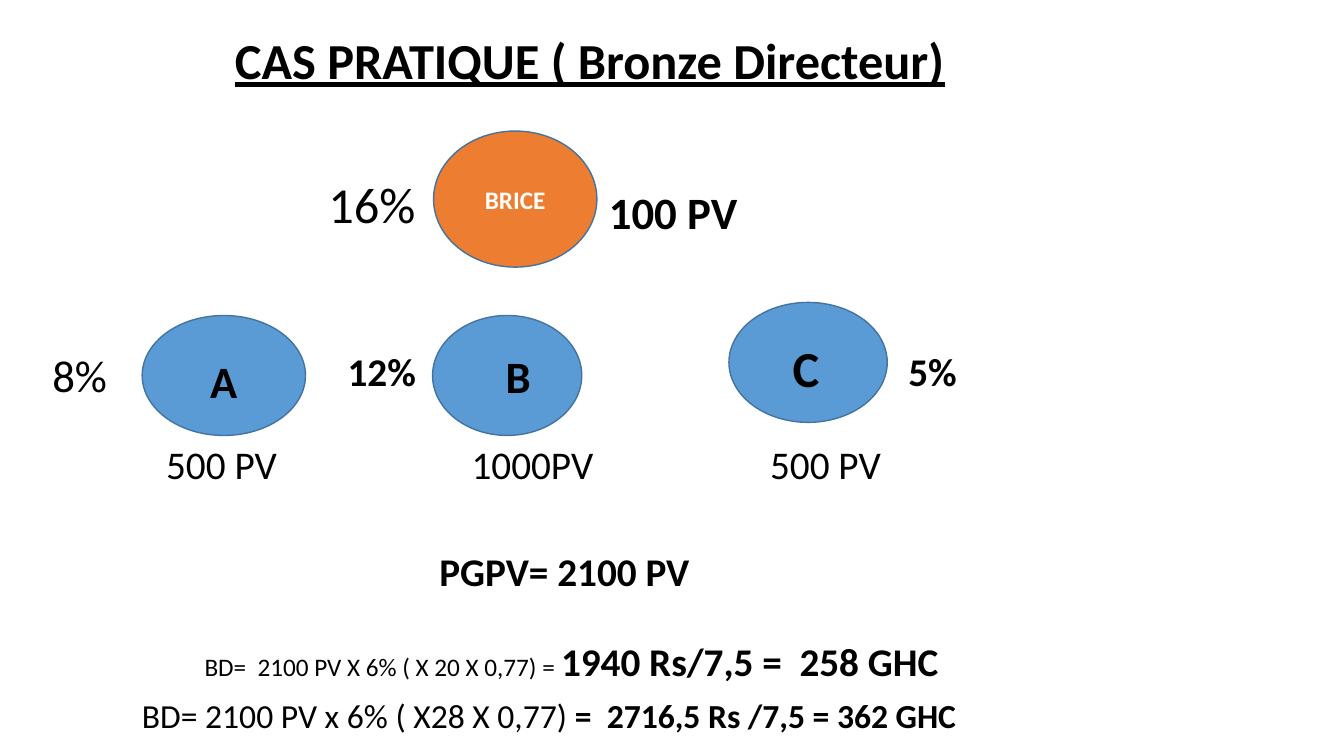
from pptx import Presentation
from pptx.dml.color import RGBColor
from pptx.enum.shapes import MSO_SHAPE
from pptx.enum.text import MSO_ANCHOR, MSO_AUTO_SIZE, PP_ALIGN
from pptx.util import Inches, Pt

OVAL = MSO_SHAPE.OVAL
TOP, MIDDLE = MSO_ANCHOR.TOP, MSO_ANCHOR.MIDDLE
LEFT, CENTER = PP_ALIGN.LEFT, PP_ALIGN.CENTER
NO_FIT = MSO_AUTO_SIZE.NONE

FONT = "Calibri"
BLACK = RGBColor(0x00, 0x00, 0x00)
WHITE = RGBColor(0xFF, 0xFF, 0xFF)
ORANGE = RGBColor(0xED, 0x7D, 0x31)
BLUE = RGBColor(0x5B, 0x9B, 0xD5)
OUTLINE = RGBColor(0x43, 0x73, 0x9E)

TITLE = "CAS PRATIQUE ( Bronze Directeur)"

# name, box, fill, text colour, size, label offset (x, y)
MEMBERS = [
    ("BRICE", (4.3, 1.3, 1.62, 1.35), ORANGE, WHITE, 18, (0, 0)),
    ("A", (1.41, 3.13, 1.62, 1.19), BLUE, BLACK, 32, (0, 0.05)),
    ("B", (4.29, 3.13, 1.48, 1.19), BLUE, BLACK, 32, (0.11, 0)),
    ("C", (7.23, 3, 1.57, 1.19), BLUE, BLACK, 36, (-0.02, 0.05)),
]

# box, runs of (text, size, bold)
RATES = [
    ((3.16, 1.67, 1.14, 0.71), [("16%", 36, False)]),
    ((0.42, 3.4, 0.99, 0.64), [("8%", 32, False)]),
    ((3.35, 3.4, 0.96, 0.57), [("12%", 28, True)]),
    ((8.91, 3.4, 2.12, 0.57), [("5%", 28, True)]),
]
VOLUMES = [
    ((5.94, 1.78, 2.48, 0.64), [("100 PV", 32, True)]),
    ((1.55, 4.32, 1.6, 0.57), [("500 PV", 28, False)]),
    ((4.58, 4.32, 1.6, 0.57), [("1000PV", 28, False)]),
    ((7.54, 4.32, 1.6, 0.57), [("500 PV", 28, False)]),
]
RESULTS = [
    ((4.26, 5.38, 3.29, 0.57), [("PGPV= 2100 PV", 28, True)]),
    ((1.93, 6.27, 9.99, 0.57), [("BD=  2100 PV X 6% ( X 20 X 0,77) = ", 18, False),
                                ("1940 Rs/7,5 =  258 GHC", 28, True)]),
    ((1.31, 6.84, 8.86, 0.5), [("BD= 2100 PV x 6% ( X28 X 0,77) ", 24, False),
                               ("=  2716,5 Rs /7,5 = 362 GHC", 24, True)]),
]


def set_font(font, size, bold, color=BLACK):
    font.name = FONT
    font.size = Pt(size)
    font.bold = bold
    font.color.rgb = color


def add_member(slide, name, box, fill, color, size, offset):
    oval = slide.shapes.add_shape(OVAL, *map(Inches, box))
    oval.shadow.inherit = False
    oval.fill.solid()
    oval.fill.fore_color.rgb = fill
    oval.line.color.rgb = OUTLINE
    oval.line.width = Pt(1)
    frame = oval.text_frame
    frame.word_wrap = True
    frame.vertical_anchor = MIDDLE
    dx, dy = offset
    frame.margin_left = Inches(max(2 * dx, 0))
    frame.margin_right = Inches(max(-2 * dx, 0))
    frame.margin_top = Inches(2 * dy)
    frame.margin_bottom = 0
    label = frame.paragraphs[0]
    label.text = name
    label.alignment = CENTER
    set_font(label.font, size, True, color)


def add_text(slide, box, runs):
    frame = slide.shapes.add_textbox(*map(Inches, box)).text_frame
    frame.word_wrap = True
    line = frame.paragraphs[0]
    for text, size, bold in runs:
        run = line.add_run()
        run.text = text
        if len(runs) > 1:
            set_font(run.font, size, bold)
    if len(runs) == 1:
        set_font(line.font, size, bold)


def add_title(slide):
    title = slide.shapes.title
    title.left, title.top, title.width, title.height = map(Inches, (2.23, 0.24, 8.69, 0.71))
    frame = title.text_frame
    frame.auto_size = NO_FIT
    frame.word_wrap = True
    frame.vertical_anchor = TOP
    heading = frame.paragraphs[0]
    heading.text = TITLE
    heading.alignment = LEFT
    set_font(heading.font, 36, True)
    heading.font.underline = True


def main():
    deck = Presentation()
    deck.slide_width, deck.slide_height = Inches(13.33), Inches(7.5)
    slide = deck.slides.add_slide(deck.slide_layouts[5])
    add_title(slide)
    for member in MEMBERS:
        add_member(slide, *member)
    for box, runs in RATES + VOLUMES + RESULTS:
        add_text(slide, box, runs)
    deck.save("out.pptx")


if __name__ == "__main__":
    main()
